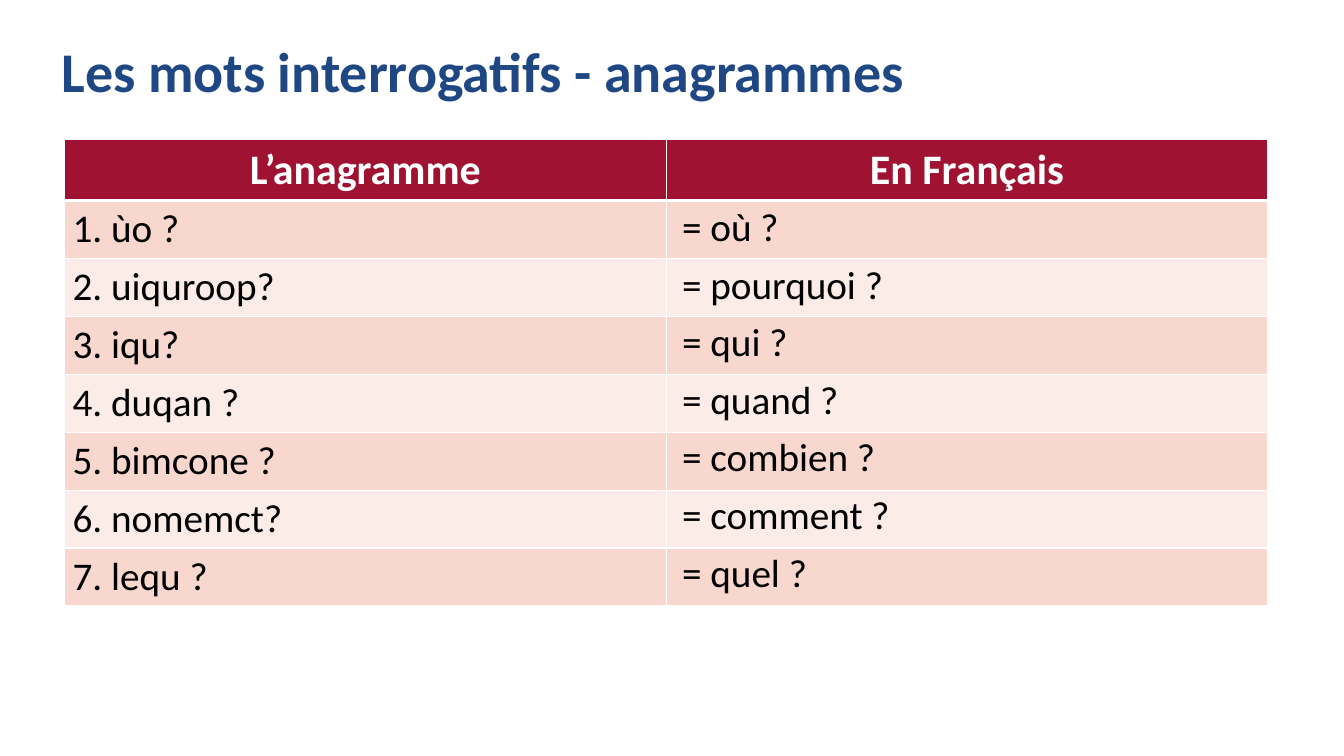
import pptx
import pptx.dml.color
import pptx.enum.text
import pptx.oxml
import pptx.oxml.ns
import pptx.util
from pptx.util import Cm

TITLE = "Les mots interrogatifs - anagrammes"
HEADERS = ["L’anagramme", "En Français"]
WORDS = [
    ("1. ùo ?", "= où ?"),
    ("2. uiquroop?", "= pourquoi ?"),
    ("3. iqu?", "= qui ?"),
    ("4. duqan ?", "= quand ?"),
    ("5. bimcone ?", "= combien ?"),
    ("6. nomemct?", "= comment ?"),
    ("7. lequ ?", "= quel ?"),
]

FONT = "Calibri"
BLUE = pptx.dml.color.RGBColor(0x1E, 0x47, 0x83)
CRIMSON = pptx.dml.color.RGBColor(0x9F, 0x12, 0x31)
ROSE = pptx.dml.color.RGBColor(0xF8, 0xD7, 0xCE)
PALE_ROSE = pptx.dml.color.RGBColor(0xFC, 0xEC, 0xE8)
WHITE = pptx.dml.color.RGBColor(0xFF, 0xFF, 0xFF)
BLACK = pptx.dml.color.RGBColor(0, 0, 0)

TABLE_LEFT, TABLE_TOP = Cm(1.63), Cm(3.51)
COLUMN_WIDTH = Cm(15.16)
HEADER_HEIGHT, ROW_HEIGHT = Cm(1.54), Cm(1.46)
ANSWER_LEFT, ANSWER_TOP = Cm(16.94), Cm(4.98)
ANSWER_WIDTH, ANSWER_HEIGHT, ANSWER_STEP = Cm(12.55), Cm(1.45), Cm(1.45)


def write(frame, text, size, color, bold=False, align=None, line_spacing=None):
    paragraph = frame.paragraphs[0]
    paragraph.alignment = align
    paragraph.line_spacing = line_spacing
    run = paragraph.add_run()
    run.text = text
    run.font.name = FONT
    run.font.size = pptx.util.Pt(size)
    run.font.bold = bold
    run.font.color.rgb = color


def add_text(slide, text, left, top, width, height, **text_format):
    shape = slide.shapes.add_textbox(left, top, width, height)
    shape.text_frame.word_wrap = True
    write(shape.text_frame, text, **text_format)
    return shape


def style_cell(cell, fill, top=1, bottom=1):
    """Give the cell white borders, with widths in points, and a fill."""
    properties = cell._tc.get_or_add_tcPr()
    namespace = pptx.oxml.ns.nsdecls("a")
    for side, width in {"L": 1, "R": 1, "T": top, "B": bottom}.items():
        properties.append(pptx.oxml.parse_xml(
            f'<a:ln{side} {namespace} w="{pptx.util.Pt(width)}"><a:solidFill>'
            f'<a:srgbClr val="{WHITE}"/></a:solidFill></a:ln{side}>'))
    cell.fill.solid()
    cell.fill.fore_color.rgb = fill
    cell.margin_left = cell.margin_right = Cm(0.2)
    cell.margin_top = cell.margin_bottom = Cm(0.13)


def add_anagram_table(slide):
    height = HEADER_HEIGHT + ROW_HEIGHT * len(WORDS)
    table = slide.shapes.add_table(
        len(WORDS) + 1, len(HEADERS), TABLE_LEFT, TABLE_TOP,
        COLUMN_WIDTH * len(HEADERS), height).table
    table.rows[0].height = HEADER_HEIGHT
    for column, header in enumerate(HEADERS):
        table.columns[column].width = COLUMN_WIDTH
        cell = table.cell(0, column)
        style_cell(cell, CRIMSON, bottom=3)
        write(cell.text_frame, header, size=30, color=WHITE, bold=True,
              align=pptx.enum.text.PP_ALIGN.CENTER)
    for row, (anagram, _) in enumerate(WORDS, start=1):
        table.rows[row].height = ROW_HEIGHT
        for column in range(len(HEADERS)):
            style_cell(table.cell(row, column), ROSE if row % 2 else PALE_ROSE,
                       top=3 if row == 1 else 1)
        write(table.cell(row, 0).text_frame, anagram, size=28, color=BLACK)


def main():
    presentation = pptx.Presentation()
    presentation.slide_width, presentation.slide_height = Cm(33.87), Cm(19.05)
    slide = presentation.slides.add_slide(presentation.slide_layouts[6])

    title = add_text(slide, TITLE, Cm(1.3), Cm(1.02), Cm(29.21), Cm(1.73),
                     size=40, color=BLUE, bold=True, line_spacing=0.9)
    title.text_frame.vertical_anchor = pptx.enum.text.MSO_ANCHOR.MIDDLE

    add_anagram_table(slide)
    for index, (_, answer) in enumerate(WORDS):
        add_text(slide, answer, ANSWER_LEFT, ANSWER_TOP + index * ANSWER_STEP,
                 ANSWER_WIDTH, ANSWER_HEIGHT, size=28, color=BLACK)

    presentation.save("out.pptx")


if __name__ == "__main__":
    main()
